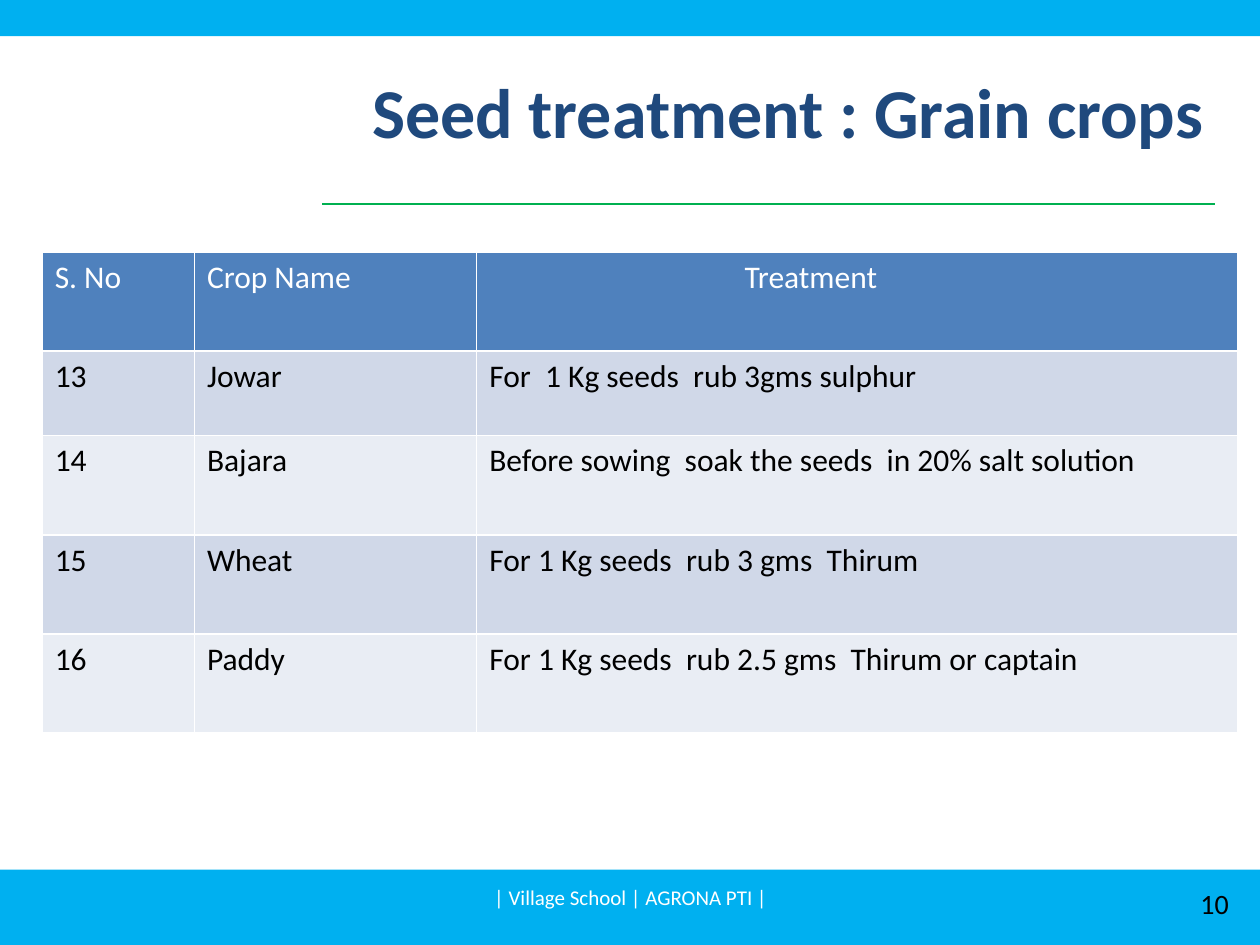
from pptx import Presentation
from pptx.dml.color import RGBColor
from pptx.enum.shapes import MSO_CONNECTOR, MSO_SHAPE
from pptx.enum.text import MSO_ANCHOR, PP_ALIGN
from pptx.oxml.ns import qn
from pptx.util import Cm, Pt
from lxml.etree import SubElement

SKY = RGBColor(0x00, 0xB0, 0xF0)
GREEN = RGBColor(0x00, 0xB0, 0x50)
NAVY = RGBColor(0x1F, 0x49, 0x7D)
HEADER_BLUE = RGBColor(0x4F, 0x81, 0xBD)
BAND_DARK = RGBColor(0xD0, 0xD8, 0xE8)
BAND_LIGHT = RGBColor(0xE9, 0xED, 0xF4)
WHITE = RGBColor(0xFF, 0xFF, 0xFF)
BLACK = RGBColor(0x00, 0x00, 0x00)


def write(frame, text, size, color, align=PP_ALIGN.LEFT, bold=False):
    frame.text = text
    para = frame.paragraphs[0]
    para.alignment = align
    font = para.runs[0].font
    font.name = "Calibri"
    font.size = Pt(size)
    font.bold = bold
    font.color.rgb = color


deck = Presentation()
deck.slide_width, deck.slide_height = Cm(25.4), Cm(19.05)
page = deck.slides.add_slide(deck.slide_layouts[5])

# Bands across the top and bottom, and the rule under the title
for top, height in ((17.53, 1.52), (0, 0.73)):
    band = page.shapes.add_shape(MSO_SHAPE.RECTANGLE, 0, Cm(top), deck.slide_width, Cm(height))
    band.shadow.inherit = False
    band.fill.solid()
    band.fill.fore_color.rgb = SKY
    band.line.fill.background()

rule = page.shapes.add_connector(MSO_CONNECTOR.STRAIGHT, Cm(6.5), Cm(4.11), Cm(24.5), Cm(4.11))
rule.line.color.rgb = GREEN
rule.line.width = Pt(0.75)
SubElement(rule._element.spPr, qn("a:effectLst"))

title = page.shapes.title
title.left, title.top, title.width, title.height = Cm(6.99), Cm(0.64), Cm(17.78), Cm(3.18)
title.text_frame.vertical_anchor = MSO_ANCHOR.MIDDLE
write(title.text_frame, "Seed treatment : Grain crops", 40, NAVY, PP_ALIGN.CENTER, True)

# Treatment table
rows = [
    ("S. No", "Crop Name", "Treatment"),
    ("13", "Jowar", "For  1 Kg seeds  rub 3gms sulphur"),
    ("14", "Bajara", "Before sowing  soak the seeds  in 20% salt solution"),
    ("15", "Wheat", "For 1 Kg seeds  rub 3 gms  Thirum"),
    ("16", "Paddy", "For 1 Kg seeds  rub 2.5 gms  Thirum or captain"),
]
column_widths = (3.07, 5.69, 15.35)
row_heights = (2, 1.7, 2, 2, 2)
table = page.shapes.add_table(
    len(rows), len(column_widths), Cm(0.85), Cm(5.08),
    Cm(sum(column_widths)), Cm(sum(row_heights)),
).table
for column, width in zip(table.columns, column_widths):
    column.width = Cm(width)
for index, (row, height, texts) in enumerate(zip(table.rows, row_heights, rows)):
    row.height = Cm(height)
    if index == 0:
        fill, color = HEADER_BLUE, WHITE
    else:
        fill, color = (BAND_DARK if index % 2 else BAND_LIGHT), BLACK
    for cell, text in zip(row.cells, texts):
        cell.fill.solid()
        cell.fill.fore_color.rgb = fill
        write(cell.text_frame, text, 18, color)
table.cell(0, 2).margin_left = Cm(5.4)

# Footer and page number
footers = [
    (8.69, 17.58, 8.05, "| Village School | AGRONA PTI |", 12, WHITE, PP_ALIGN.CENTER),
    (19.1, 17.7, 5.92, "10", 16, BLACK, PP_ALIGN.RIGHT),
]
for left, top, width, text, size, color, align in footers:
    box = page.shapes.add_textbox(Cm(left), Cm(top), Cm(width), Cm(1.02))
    box.text_frame.word_wrap = True
    box.text_frame.vertical_anchor = MSO_ANCHOR.MIDDLE
    write(box.text_frame, text, size, color, align)

deck.save("out.pptx")
